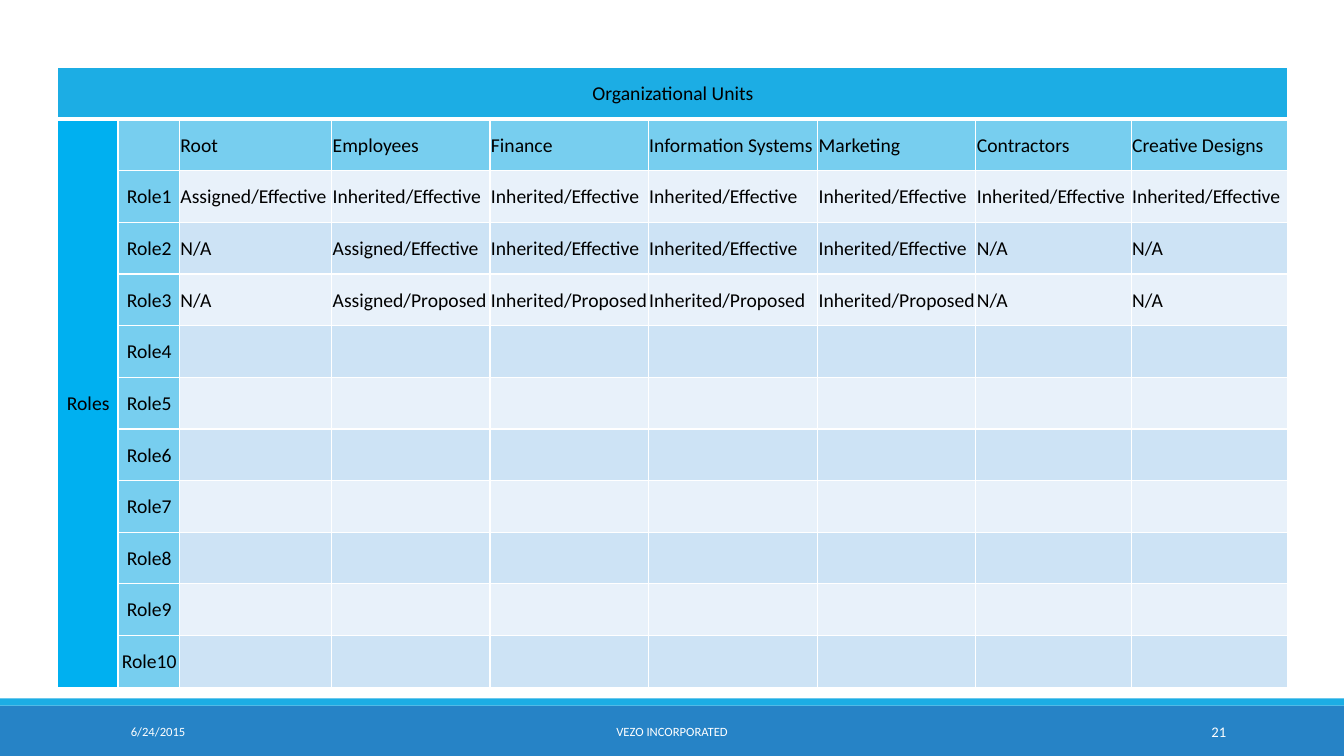
from lxml.etree import SubElement
from pptx import Presentation
from pptx.dml.color import RGBColor
from pptx.enum.shapes import MSO_SHAPE
from pptx.enum.text import MSO_ANCHOR, PP_ALIGN
from pptx.oxml.ns import qn
from pptx.util import Inches, Pt

TABLE_TITLE = "Organizational Units"
SIDE_TITLE = "Roles"
UNITS = ["Root", "Employees", "Finance", "Information Systems", "Marketing",
         "Contractors", "Creative Designs"]
ROLE_COUNT = 10
ASSIGNED, INHERITED = "Assigned/Effective", "Inherited/Effective"
PROPOSED = "Inherited/Proposed"
STATUSES = [
    [ASSIGNED] + [INHERITED] * 6,
    ["N/A", ASSIGNED] + [INHERITED] * 3 + ["N/A"] * 2,
    ["N/A", "Assigned/Proposed"] + [PROPOSED] * 3 + ["N/A"] * 2,
]
COLUMN_WIDTHS = [0.6, 0.61, 1.51, 1.57, 1.57, 1.68, 1.57, 1.54, 1.55]
TABLE_BOX = (0.57, 0.67, 12.19, 6.15)

BARS = [((0, 7, 13.33, 0.5), "2683C6"), ((0, 6.93, 13.33, 0.07), "1CADE4")]
FOOTERS = [
    ("6/24/2015", (1.2, 7.06, 2.7, 0.4), 9, PP_ALIGN.LEFT),
    ("VEZO INCORPORATED", (4.03, 7.06, 5.27, 0.4), 9, PP_ALIGN.CENTER),
    ("21", (10.83, 7.06, 1.43, 0.4), 10.5, PP_ALIGN.RIGHT),
]
HEADER, SIDE, LABEL = "1CADE4", "00B0F0", "77CEEF"
BANDS = ["E8F1FA", "CDE3F5"]


def color(hex_string):
    return RGBColor.from_string(hex_string)


def inches(box):
    return [Inches(length) for length in box]


def write(text_frame, text, size, hex_string, align):
    paragraph = text_frame.paragraphs[0]
    paragraph.text = text
    paragraph.alignment = align
    paragraph.font.name = "Calibri"
    paragraph.font.size = Pt(size)
    paragraph.font.color.rgb = color(hex_string)


def add_border(cell, side, width):
    line = SubElement(cell._tc.get_or_add_tcPr(), qn(f"a:ln{side}"), w=str(Pt(width)))
    SubElement(SubElement(line, qn("a:solidFill")), qn("a:srgbClr"), val="FFFFFF")


def cell_fill(row, column):
    if row == 0:
        return HEADER
    if column == 0:
        return SIDE
    if row == 1 or column == 1:
        return LABEL
    return BANDS[row % 2]


def add_bar(slide, box, hex_string):
    bar = slide.shapes.add_shape(MSO_SHAPE.RECTANGLE, *inches(box))
    bar.shadow.inherit = False
    bar.fill.solid()
    bar.fill.fore_color.rgb = color(hex_string)
    bar.line.fill.background()


def add_footer(slide, text, box, size, align):
    text_frame = slide.shapes.add_textbox(*inches(box)).text_frame
    text_frame.word_wrap = True
    text_frame.vertical_anchor = MSO_ANCHOR.MIDDLE
    write(text_frame, text, size, "FFFFFF", align)


def add_role_table(slide):
    blank = [""] * len(UNITS)
    rows = [[TABLE_TITLE, ""] + blank, [SIDE_TITLE, ""] + UNITS]
    for number in range(1, ROLE_COUNT + 1):
        statuses = STATUSES[number - 1] if number <= len(STATUSES) else blank
        rows.append(["", f"Role{number}"] + statuses)

    table = slide.shapes.add_table(len(rows), len(COLUMN_WIDTHS), *inches(TABLE_BOX)).table
    for column, width in zip(table.columns, COLUMN_WIDTHS):
        column.width = Inches(width)
    for r, texts in enumerate(rows):
        for c, text in enumerate(texts):
            cell = table.cell(r, c)
            for side in "LRTB":
                under_header = (r, side) in [(0, "B"), (1, "T")]
                add_border(cell, side, 3 if under_header else 1)
            cell.fill.solid()
            cell.fill.fore_color.rgb = color(cell_fill(r, c))
            cell.vertical_anchor = MSO_ANCHOR.MIDDLE
            cell.margin_left = cell.margin_top = Inches(0.01)
            cell.margin_right = cell.margin_bottom = 0
            align = PP_ALIGN.CENTER if r == 0 or c < 2 else PP_ALIGN.LEFT
            write(cell.text_frame, text, 14, "000000", align)
    table.cell(0, 0).merge(table.cell(0, len(COLUMN_WIDTHS) - 1))
    side_cell = table.cell(1, 0)
    side_cell.merge(table.cell(len(rows) - 1, 0))
    side_cell._tc.tcPr.set("vert", "wordArtVert")


def main():
    presentation = Presentation()
    presentation.slide_width, presentation.slide_height = inches((13.33, 7.5))
    slide = presentation.slides.add_slide(presentation.slide_layouts[6])
    for bar in BARS:
        add_bar(slide, *bar)
    for footer in FOOTERS:
        add_footer(slide, *footer)
    add_role_table(slide)
    presentation.save("out.pptx")


if __name__ == "__main__":
    main()
